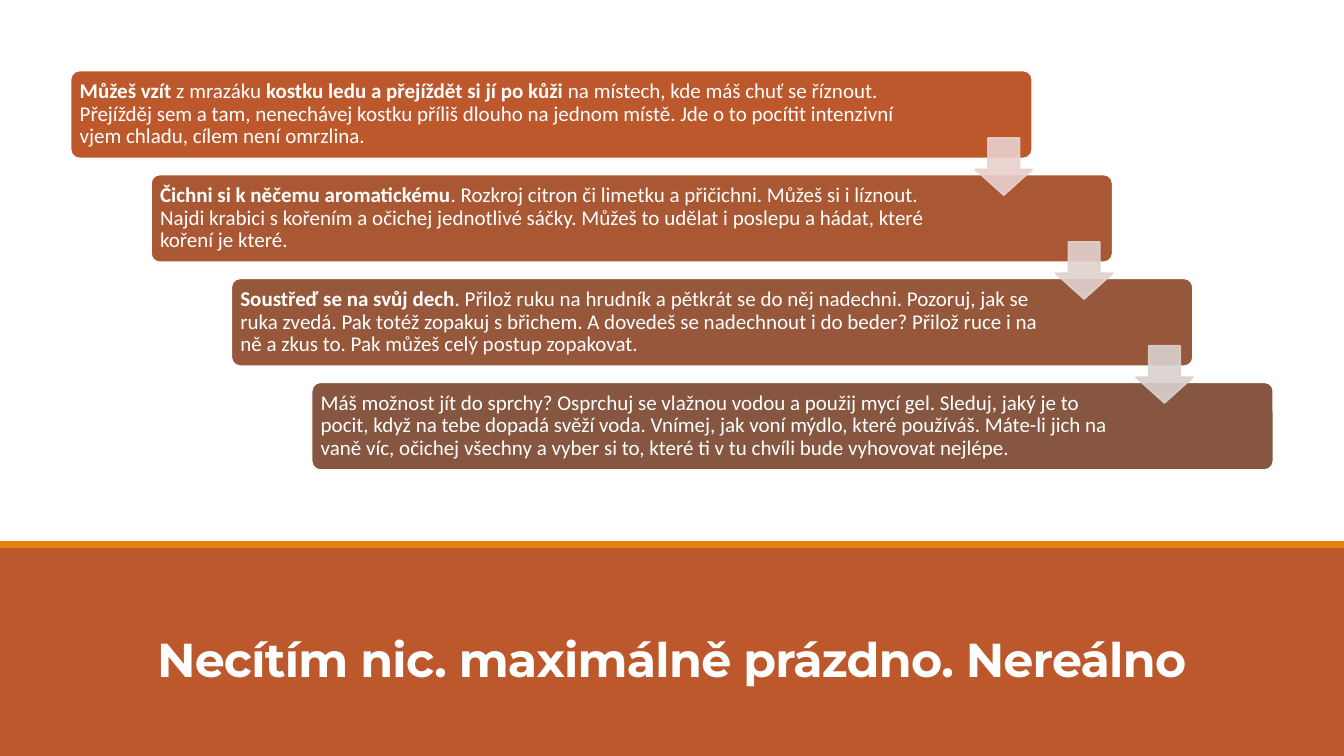
from pptx import Presentation
from pptx.dml.color import RGBColor
from pptx.enum import shapes, text
from pptx.oxml import parse_xml
from pptx.oxml.ns import nsdecls
from pptx.util import Pt

COLORS = {"white": "FFFFFF", "rust": "BD582C", "orange": "E48312"}
CARD_FILLS = ["BD582C", "AA5834", "97573A", "865640"]
ARROW_FILLS = ["E8D1CD", "E1D1CE", "D9D1CF"]

SLIDE_WIDTH, SLIDE_HEIGHT = 960, 540
CARD_LEFT, CARD_TOP, CARD_WIDTH, CARD_HEIGHT = 50.4, 50.4, 687, 62.8
STEP_X, STEP_Y = 57.4, 74.2
TEXT_WIDTHS = [613.4, 584.8, 584.8, 584.8]
ARROW_SIZE = 40.8
ARROW_DROP = 48.2

# Each tip is a list of (text, bold) runs.
TIPS = [
    [("Můžeš vzít", True),
     (" z mrazáku ", False),
     ("kostku ledu a přejíždět si jí po kůži", True),
     (" na místech, kde máš chuť se říznout. Přejížděj sem a tam, nenechávej "
      "kostku příliš dlouho na jednom místě. Jde o to pocítit intenzivní vjem "
      "chladu, cílem není omrzlina.", False)],
    [("Čichni si k něčemu aromatickému", True),
     (". Rozkroj citron či limetku a přičichni. Můžeš si i líznout. Najdi "
      "krabici s kořením a očichej jednotlivé sáčky. Můžeš to udělat i poslepu "
      "a hádat, které koření je které.", False)],
    [("Soustřeď se na svůj dech", True),
     (". Přilož ruku na hrudník a pětkrát se do něj nadechni. Pozoruj, jak se "
      "ruka zvedá. Pak totéž zopakuj s břichem. A dovedeš se nadechnout i do "
      "beder? Přilož ruce i na ně a zkus to. Pak můžeš celý postup zopakovat.",
      False)],
    [("Máš možnost jít do sprchy? Osprchuj se vlažnou vodou a použij mycí gel. "
      "Sleduj, jaký je to pocit, když na tebe dopadá svěží voda. Vnímej, jak "
      "voní mýdlo, které používáš. Máte-li jich na vaně víc, očichej všechny a "
      "vyber si to, které ti v tu chvíli bude vyhovovat nejlépe.", False)],
]


def add_block(slide, kind, box, fill, line=None, adjustments=()):
    shape = slide.shapes.add_shape(kind, *map(Pt, box))
    shape.shadow.inherit = False
    shape.fill.solid()
    shape.fill.fore_color.rgb = RGBColor.from_string(fill)
    if line:
        shape.line.color.rgb = RGBColor.from_string(line)
        shape.line.width = Pt(1.25)
    else:
        shape.line.fill.background()
    for index, value in enumerate(adjustments):
        shape.adjustments[index] = value
    return shape


def set_opacity(shape, percent):
    """Make both the fill and the outline partly transparent."""
    for color in shape._element.spPr.iter("{*}srgbClr"):
        color.append(parse_xml(f'<a:alpha {nsdecls("a")} val="{percent * 1000}"/>'))


def add_text(slide, box, runs, font, size, anchor, line_spacing, inset):
    """Add a one-paragraph text box and return its paragraph."""
    frame = slide.shapes.add_textbox(*map(Pt, box)).text_frame
    frame.word_wrap = True
    frame.vertical_anchor = anchor
    frame.margin_left = frame.margin_right = Pt(inset[0])
    frame.margin_top = frame.margin_bottom = Pt(inset[1])
    paragraph = frame.paragraphs[0]
    paragraph.line_spacing = line_spacing
    for content, bold in runs:
        run = paragraph.add_run()
        run.text = content
        run.font.name = font
        run.font.size = Pt(size)
        run.font.bold = bold
        run.font.color.rgb = RGBColor.from_string(COLORS["white"])
    return paragraph


def add_title_band(slide):
    rectangle = shapes.MSO_SHAPE.RECTANGLE
    add_block(slide, rectangle, (0, 390, SLIDE_WIDTH, 150), COLORS["rust"])
    title = add_text(slide, (84, 413.3, 792, 81.4),
                     [("Necítím nic. maximálně prázdno. Nereálno", True)],
                     "Montserrat", 34, text.MSO_ANCHOR.BOTTOM, 0.85, (7.2, 3.6))
    title.alignment = text.PP_ALIGN.CENTER
    title.runs[0].font._element.set("spc", "-50")
    add_block(slide, rectangle, (0, 386.5, SLIDE_WIDTH, 5), COLORS["orange"])


def add_tip(slide, index):
    left, top = CARD_LEFT + index * STEP_X, CARD_TOP + index * STEP_Y
    add_block(slide, shapes.MSO_SHAPE.ROUNDED_RECTANGLE,
              (left, top, CARD_WIDTH, CARD_HEIGHT),
              CARD_FILLS[index], COLORS["white"], [0.1])
    add_text(slide, (left + 2, top + 2, TEXT_WIDTHS[index], CARD_HEIGHT - 4),
             TIPS[index], "Calibri", 15, text.MSO_ANCHOR.MIDDLE, 0.9, (4.5, 4.5))


def add_step_arrow(slide, index):
    right = CARD_LEFT + index * STEP_X + CARD_WIDTH
    top = CARD_TOP + index * STEP_Y + ARROW_DROP
    color = ARROW_FILLS[index]
    arrow = add_block(slide, shapes.MSO_SHAPE.DOWN_ARROW,
                      (right - ARROW_SIZE, top, ARROW_SIZE, ARROW_SIZE),
                      color, color, [0.55, 0.45])
    set_opacity(arrow, 90)


def main():
    presentation = Presentation()
    presentation.slide_width = Pt(SLIDE_WIDTH)
    presentation.slide_height = Pt(SLIDE_HEIGHT)
    slide = presentation.slides.add_slide(presentation.slide_layouts[6])
    add_title_band(slide)
    for index in range(len(TIPS)):
        add_tip(slide, index)
    for index in range(len(ARROW_FILLS)):
        add_step_arrow(slide, index)
    presentation.save("out.pptx")


if __name__ == "__main__":
    main()
